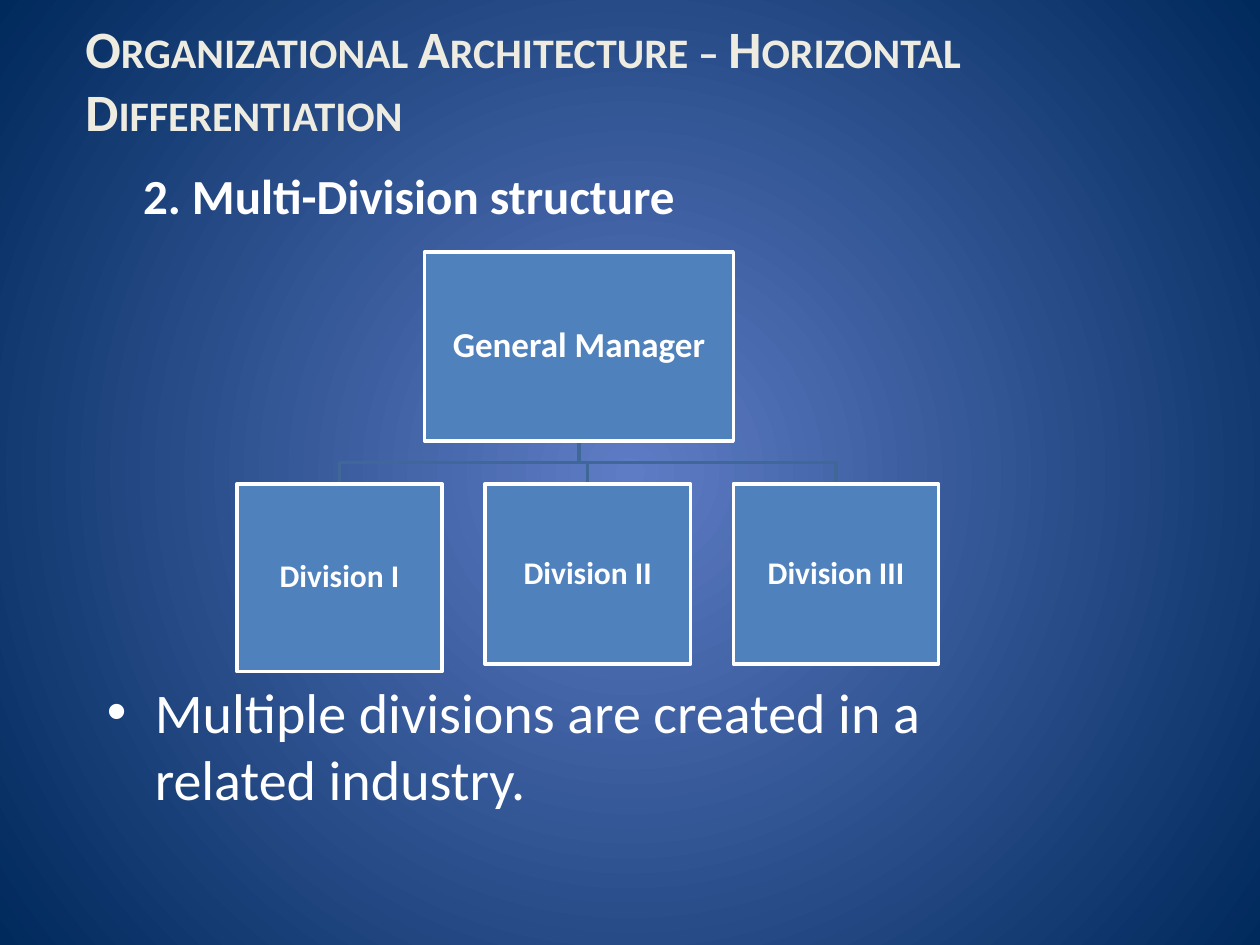
"""Build the slide on the multi-division structure with its organisation chart."""
from lxml.etree import SubElement
from pptx import Presentation
from pptx.dml.color import RGBColor as RGB
from pptx.enum.shapes import MSO_SHAPE as SHAPE
from pptx.enum.text import MSO_ANCHOR as ANCHOR, PP_ALIGN as ALIGN
from pptx.oxml.ns import qn
from pptx.util import Inches, Pt

THEME = {
    "font": "Calibri",
    "glow": RGB.from_string("5E7CC5"), "edge": RGB.from_string("00295C"),
    "box": RGB.from_string("4F81BD"), "link": RGB.from_string("3F6797"),
    "white": RGB.from_string("FFFFFF"), "cream": RGB.from_string("EEECE1"),
    "title": 30, "heading": 28, "body": 32, "manager": 20, "division": 18, "line": 2,
}

deck = Presentation()
deck.slide_width, deck.slide_height = Inches(10), Inches(7.5)
COL, ROW = deck.slide_width / 100, deck.slide_height / 100
slide = deck.slides.add_slide(deck.slide_layouts[6])


def area(left, top, width, height):
    return round(left * COL), round(top * ROW), round(width * COL), round(height * ROW)


def write(holder, wording, size, color="white", bold=True, align=ALIGN.LEFT, anchor=ANCHOR.TOP):
    frame = holder.text_frame
    frame.word_wrap, frame.vertical_anchor = True, anchor
    paragraph = frame.paragraphs[0]
    paragraph.alignment = align
    run = paragraph.add_run()
    run.text = wording
    run.font.name, run.font.size, run.font.bold = THEME["font"], Pt(THEME[size]), bold
    run.font.color.rgb = THEME[color]
    return paragraph


backdrop = slide.background.fill
backdrop.gradient()
for stop, shade in zip(backdrop.gradient_stops, ("glow", "edge")):
    stop.color.rgb = THEME[shade]
gradient = slide.element.find(".//" + qn("a:gradFill"))
gradient.remove(gradient.find(qn("a:lin")))
circle = SubElement(gradient, qn("a:path"), path="circle")
SubElement(circle, qn("a:fillToRect"), l="50000", t="50000", r="50000", b="50000")

heading = slide.shapes.add_textbox(*area(3.3, 15.6, 58.3, 10))
write(heading, "2. Multi-Division structure", "heading", align=ALIGN.CENTER, anchor=ANCHOR.MIDDLE)

body = slide.shapes.add_textbox(*area(7.5, 71.07, 79.2, 18.93))
point = write(body, "Multiple divisions are created in a related industry.", "body", bold=False)
point.space_before = Pt(6.4)
indent = point._p.get_or_add_pPr()
indent.set("marL", str(Inches(0.38)))
indent.set("indent", str(Inches(-0.38)))
SubElement(indent, qn("a:buFont"), typeface="Arial")
SubElement(indent, qn("a:buChar"), char="•")

manager = (33.7, 26.67, 24.5, 20)
first_left, pitch, division_top, division_width = 18.8, 19.7, 51.2, 16.3
divisions = [
    (first_left + i * pitch, division_top, division_width, height)
    for i, height in enumerate((19.87, 19.07, 19.07))
]

trunk, manager_bottom = manager[0] + manager[2] / 2, manager[1] + manager[3]
bus = (manager_bottom + division_top) / 2
for left, top, width, height in reversed(divisions):
    branch = left + width / 2
    route = slide.shapes.build_freeform(round(trunk * COL), round(manager_bottom * ROW))
    bends = ((trunk, bus), (branch, bus), (branch, top))
    route.add_line_segments([(round(x * COL), round(y * ROW)) for x, y in bends], close=False)
    link = route.convert_to_shape()
    link.shadow.inherit = False
    link.fill.background()
    link.line.color.rgb, link.line.width = THEME["link"], Pt(THEME["line"])

units = [("General Manager", manager, "manager")]
units += [(f"Division {n}", place, "division") for n, place in zip(("I", "II", "III"), divisions)]
for name, place, size in units:
    box = slide.shapes.add_shape(SHAPE.RECTANGLE, *area(*place))
    box.shadow.inherit = False
    box.fill.solid()
    box.fill.fore_color.rgb = THEME["box"]
    box.line.color.rgb, box.line.width = THEME["white"], Pt(THEME["line"])
    frame = box.text_frame
    frame.margin_left = frame.margin_right = frame.margin_top = frame.margin_bottom = Inches(0.01)
    label = write(box, name, size, align=ALIGN.CENTER, anchor=ANCHOR.MIDDLE)
    label.line_spacing = 0.9

title = slide.shapes.add_textbox(*area(5.8, 0, 88.3, 15.73))
topic = write(title, "Organizational Architecture – Horizontal Differentiation", "title",
              color="cream", anchor=ANCHOR.BOTTOM)
topic.runs[0].font._element.set("cap", "small")

deck.save("out.pptx")
